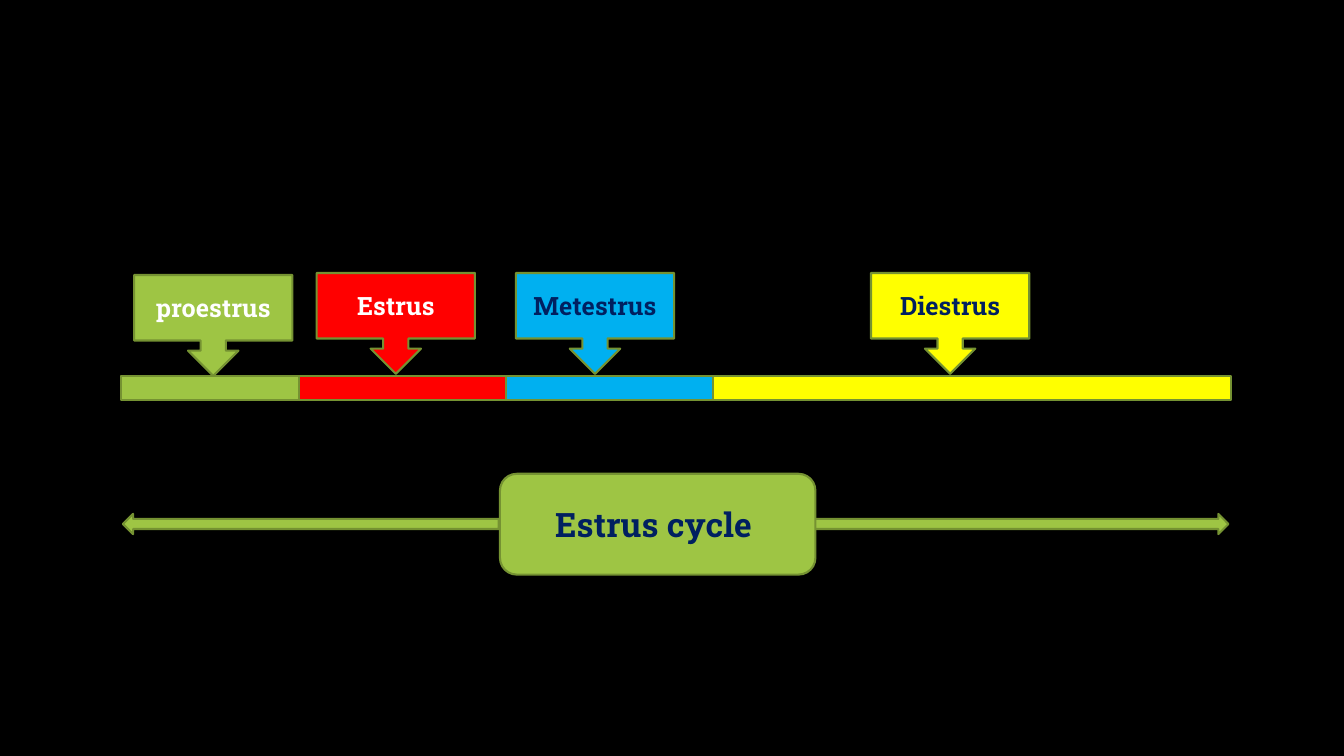
from dataclasses import dataclass

from pptx import Presentation
from pptx.dml.color import RGBColor
from pptx.enum.shapes import MSO_SHAPE
from pptx.enum.text import MSO_ANCHOR, PP_ALIGN
from pptx.shapes.autoshape import Shape
from pptx.slide import Slide
from pptx.util import Cm, Pt

MINUS = MSO_SHAPE.MATH_MINUS
CALLOUT = MSO_SHAPE.DOWN_ARROW_CALLOUT
LEFT_ARROW = MSO_SHAPE.LEFT_ARROW
RIGHT_ARROW = MSO_SHAPE.RIGHT_ARROW
ROUNDED = MSO_SHAPE.ROUNDED_RECTANGLE
MIDDLE = MSO_ANCHOR.MIDDLE
CENTER = PP_ALIGN.CENTER


@dataclass(frozen=True)
class Theme:
    """Colours, font and type sizes of the slide."""

    background: str = "000000"
    outline: str = "759232"
    green: str = "9EC544"
    red: str = "FF0000"
    blue: str = "00B0F0"
    yellow: str = "FFFF00"
    navy: str = "002060"
    white: str = "FFFFFF"
    font: str = "Roboto Slab"
    outline_width: float = 1.5
    phase_size: int = 18
    cycle_size: int = 24


@dataclass(frozen=True)
class Box:
    """Position and size in centimetres."""

    left: float
    top: float
    width: float
    height: float


@dataclass(frozen=True)
class Phase:
    """One phase of the cycle with its callout and timeline bar."""

    name: str
    fill: str
    ink: str
    bar_left: float
    bar_width: float
    callout_left: float
    callout_top: float = 6.88


THEME = Theme()
BAR_TOP = 8.51
CALLOUT_WIDTH = 3.99
PART_HEIGHT = 2.54
ARROW_TOP = 12.95
ARROW_HEIGHT = 0.51

PHASES = (
    Phase("proestrus", THEME.green, THEME.white, 2.21, 6.32, 3.38, 6.93),
    Phase("Estrus", THEME.red, THEME.white, 6.58, 7.16, 7.98),
    Phase("Metestrus", THEME.blue, THEME.navy, 11.81, 7.16, 13),
    Phase("Diestrus", THEME.yellow, THEME.navy, 15.62, 17.75, 21.95),
)
CYCLE_ARROWS = (
    (LEFT_ARROW, Box(3.1, ARROW_TOP, 9.47, ARROW_HEIGHT)),
    (RIGHT_ARROW, Box(20.52, ARROW_TOP, 10.44, ARROW_HEIGHT)),
)
CYCLE_BOX = Box(12.6, 11.94, 7.95, PART_HEIGHT)


def draw_part(slide: Slide, kind: MSO_SHAPE, box: Box, fill: str) -> Shape:
    """Draw one filled and outlined shape."""
    part = slide.shapes.add_shape(
        kind, Cm(box.left), Cm(box.top), Cm(box.width), Cm(box.height)
    )
    part.shadow.inherit = False
    part.fill.solid()
    part.fill.fore_color.rgb = RGBColor.from_string(fill)
    part.line.color.rgb = RGBColor.from_string(THEME.outline)
    part.line.width = Pt(THEME.outline_width)
    return part


def write_label(part: Shape, wording: str, ink: str, size: int) -> None:
    """Write a bold centred label inside a shape."""
    part.text_frame.vertical_anchor = MIDDLE
    paragraph = part.text_frame.paragraphs[0]
    paragraph.alignment = CENTER
    label = paragraph.add_run()
    label.text = wording
    label_format = {"name": THEME.font, "size": Pt(size), "bold": True}
    for attribute, value in label_format.items():
        setattr(label.font, attribute, value)
    label.font.color.rgb = RGBColor.from_string(ink)


def draw_timeline(slide: Slide) -> None:
    """Draw the coloured bar of each phase."""
    for phase in PHASES:
        bar = Box(phase.bar_left, BAR_TOP, phase.bar_width, PART_HEIGHT)
        draw_part(slide, MINUS, bar, phase.fill)


def draw_cycle(slide: Slide) -> None:
    """Draw the span of the whole cycle with its title."""
    for kind, box in CYCLE_ARROWS:
        draw_part(slide, kind, box, THEME.green)
    cycle = draw_part(slide, ROUNDED, CYCLE_BOX, THEME.green)
    write_label(cycle, "Estrus cycle ", THEME.navy, THEME.cycle_size)


def draw_callouts(slide: Slide) -> None:
    """Draw the callout naming each phase."""
    for phase in PHASES:
        box = Box(phase.callout_left, phase.callout_top, CALLOUT_WIDTH, PART_HEIGHT)
        callout = draw_part(slide, CALLOUT, box, phase.fill)
        write_label(callout, phase.name, phase.ink, THEME.phase_size)


def main() -> None:
    """Build and save the estrus cycle slide."""
    presentation = Presentation()
    presentation.slide_width = Cm(33.87)
    presentation.slide_height = Cm(19.05)
    slide = presentation.slides.add_slide(presentation.slide_layouts[6])
    slide.background.fill.solid()
    slide.background.fill.fore_color.rgb = RGBColor.from_string(THEME.background)
    draw_timeline(slide)
    draw_cycle(slide)
    draw_callouts(slide)
    presentation.save("out.pptx")


if __name__ == "__main__":
    main()
